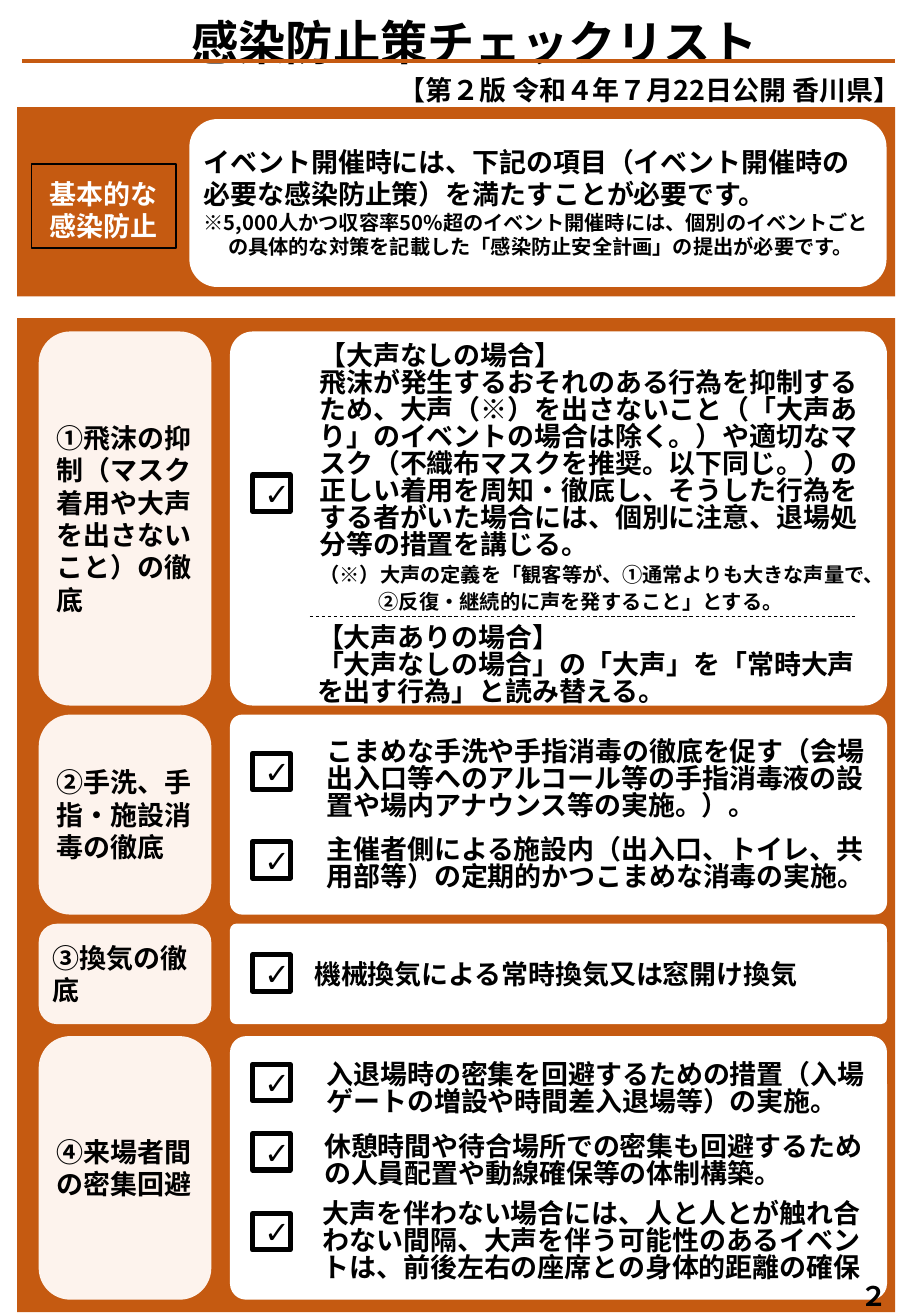
from dataclasses import dataclass

from lxml.etree import SubElement
from pptx import Presentation
from pptx.dml.color import RGBColor
from pptx.enum.dml import MSO_LINE
from pptx.enum.shapes import MSO_CONNECTOR, MSO_SHAPE
from pptx.enum.text import MSO_ANCHOR, MSO_AUTO_SIZE, PP_ALIGN
from pptx.oxml.ns import qn
from pptx.util import Cm, Pt

ORANGE = RGBColor(0xC5, 0x5A, 0x11)
CREAM = RGBColor(0xFD, 0xF3, 0xED)
WHITE = RGBColor(0xFF, 0xFF, 0xFF)
BLACK = RGBColor(0x00, 0x00, 0x00)
JAPANESE_FONT = "Noto Sans CJK JP"
CHECK_FONT = "Calibri"


@dataclass
class Line:
    text: str
    size: int = 16
    hanging: float = 0


@dataclass
class Item:
    left: float
    top: float
    height: float
    lines: list
    check_top: float = None


SECTIONS = [
    (6.93, 7.82, "①飛沫の抑制（マスク着用や大声を出さないこと）の徹底", [
        Item(5.62, 0.08, 5.94, [
            Line("【大声なしの場合】"),
            Line("飛沫が発生するおそれのある行為を抑制するため、大声（※）を出さないこと（「大声あり」のイベントの場合は除く。）"
                 "や適切なマスク（不織布マスクを推奨。以下同じ。）の正しい着用を周知・徹底し、そうした行為をする者がいた場合には、"
                 "個別に注意、退場処分等の措置を講じる。"),
            Line("（※）大声の定義を「観客等が、①通常よりも大きな声量で、②反復・継続的に声を発すること」とする。", 12, 1.24),
        ], 3.0),
        Item(5.57, 6.02, 1.96, [
            Line("【大声ありの場合】"),
            Line("「大声なしの場合」の「大声」を「常時大声を出す行為」と読み替える。"),
        ]),
    ]),
    (14.94, 4.18, "②手洗、手指・施設消毒の徹底", [
        Item(5.77, 0.38, 1.96, [Line(
            "こまめな手洗や手指消毒の徹底を促す（会場出入口等へのアルコール等の手指消毒液の設置や場内アナウンス等の実施。）。")], 0.81),
        Item(5.77, 2.41, 1.42, [Line(
            "主催者側による施設内（出入口、トイレ、共用部等）の定期的かつこまめな消毒の実施。")], 2.66),
    ]),
    (19.31, 2.1, "③換気の徹底", [
        Item(5.51, 0.65, 0.86, [Line("機械換気による常時換気又は窓開け換気")], 0.65),
    ]),
    (21.66, 5.51, "④来場者間の密集回避", [
        Item(5.77, 0.39, 1.42, [Line(
            "入退場時の密集を回避するための措置（入場ゲートの増設や時間差入退場等）の実施。")], 0.59),
        Item(5.72, 1.89, 1.42, [Line(
            "休憩時間や待合場所での密集も回避するための人員配置や動線確保等の体制構築。")], 2.04),
        Item(5.69, 3.28, 2.01, [Line(
            "大声を伴わない場合には、人と人とが触れ合わない間隔、大声を伴う可能性のあるイベントは、"
            "前後左右の座席との身体的距離の確保")], 3.71),
    ]),
]


def write(shape, lines, color=BLACK, align=PP_ALIGN.LEFT, anchor=MSO_ANCHOR.TOP,
          spacing=None, font=JAPANESE_FONT, bold=True):
    frame = shape.text_frame
    frame.word_wrap = True
    frame.auto_size = MSO_AUTO_SIZE.NONE
    frame.vertical_anchor = anchor
    frame.text = "\n".join(line.text for line in lines)
    for paragraph, line in zip(frame.paragraphs, lines):
        paragraph.alignment = align
        if spacing:
            paragraph.line_spacing = spacing
        run = paragraph.runs[0]
        run.font.name = font
        run.font.size = Pt(line.size)
        run.font.bold = bold
        run.font.color.rgb = color
        SubElement(run.font._element, qn("a:ea")).set("typeface", font)
        if line.hanging:
            properties = paragraph._p.get_or_add_pPr()
            properties.set("marL", str(Cm(line.hanging)))
            properties.set("indent", str(-Cm(line.hanging)))


def add_text(slide, left, top, width, height, lines, **style):
    box = slide.shapes.add_textbox(Cm(left), Cm(top), Cm(width), Cm(height))
    write(box, lines, **style)


def add_box(slide, kind, left, top, width, height, fill=None, outline=0, corner=None):
    shape = slide.shapes.add_shape(kind, Cm(left), Cm(top), Cm(width), Cm(height))
    shape.shadow.inherit = False
    if fill is None:
        shape.fill.background()
    else:
        shape.fill.solid()
        shape.fill.fore_color.rgb = fill
    if outline:
        shape.line.color.rgb = BLACK
        shape.line.width = Pt(outline)
    else:
        shape.line.fill.background()
    if corner is not None:
        shape.adjustments[0] = corner
    return shape


def add_rule(slide, left, right, top, color, width, dash=None):
    rule = slide.shapes.add_connector(
        MSO_CONNECTOR.STRAIGHT, Cm(left), Cm(top), Cm(right), Cm(top))
    rule.line.color.rgb = color
    rule.line.width = Pt(width)
    if dash:
        rule.line.dash_style = dash
    SubElement(rule._element.spPr, qn("a:effectLst"))


def add_heading(slide, left, top, width):
    title = slide.shapes.title
    title.left, title.top, title.width, title.height = Cm(left - 1.04), Cm(top), Cm(width + 2.75), Cm(1.45)
    write(title, [Line("感染防止策チェックリスト", 28)], align=PP_ALIGN.CENTER)
    add_rule(slide, left, left + width, top + 1.12, ORANGE, 2.25)
    add_text(slide, left + 7.19, top + 1.27, 11.86, 0.94,
             [Line("【第２版 令和４年７月22日公開 香川県】")], align=PP_ALIGN.CENTER)


def add_notice(slide, left, top, width, height):
    add_box(slide, MSO_SHAPE.RECTANGLE, left, top, width, height, ORANGE)
    add_box(slide, MSO_SHAPE.ROUNDED_RECTANGLE, left + 3.6, top + 0.25, width - 3.78, height - 0.45, WHITE)
    label = add_box(slide, MSO_SHAPE.RECTANGLE, left + 0.3, top + 1.19, 3.02, 1.75, outline=1)
    label.text_frame.margin_top = Cm(0.28)
    write(label, [Line("基本的な"), Line("感染防止")], WHITE, PP_ALIGN.CENTER, MSO_ANCHOR.MIDDLE)
    add_text(slide, left + 3.65, top + 0.68, 14.5, 2.72, [
        Line("イベント開催時には、下記の項目（イベント開催時の必要な感染防止策）を満たすことが必要です。"),
        Line("※5,000人かつ収容率50%超のイベント開催時には、個別のイベントごとの具体的な対策を記載した"
             "「感染防止安全計画」の提出が必要です。", 12, 0.51),
    ])


def add_section(slide, left, top, height, heading, items):
    add_box(slide, MSO_SHAPE.ROUNDED_RECTANGLE, left + 4.0, top, 13.74, height, WHITE, corner=0.061)
    label = add_box(slide, MSO_SHAPE.ROUNDED_RECTANGLE, left, top, 3.61, height, CREAM, corner=0.183)
    frame = label.text_frame
    frame.margin_left = frame.margin_right = Cm(0.18)
    frame.margin_top = frame.margin_bottom = Cm(0.1)
    write(label, [Line(heading)], anchor=MSO_ANCHOR.MIDDLE)
    for item in items:
        add_text(slide, left + item.left, top + item.top, 11.9, item.height, item.lines,
                 anchor=MSO_ANCHOR.BOTTOM, spacing=Pt(16))
        if item.check_top is None:
            add_rule(slide, left + 5.67, left + 17.07, top + item.top - 0.07, BLACK, 0.5, MSO_LINE.DASH)
        else:
            check = add_box(slide, MSO_SHAPE.RECTANGLE, left + 4.47, top + item.check_top, 0.79, 0.76, outline=3)
            write(check, [Line("✓", 18)], align=PP_ALIGN.CENTER, anchor=MSO_ANCHOR.MIDDLE,
                  font=CHECK_FONT, bold=False)


def add_checklist(slide, left, top, width, height):
    add_box(slide, MSO_SHAPE.RECTANGLE, left, top, width, height, ORANGE)
    for section_top, section_height, heading, items in SECTIONS:
        add_section(slide, left + 0.45, section_top, section_height, heading, items)
    add_text(slide, left + 17.17, top + height - 0.81, 1.5, 0.94, [Line("２")],
             align=PP_ALIGN.CENTER, anchor=MSO_ANCHOR.MIDDLE)


def main():
    presentation = Presentation()
    presentation.slide_width = Cm(19.05)
    presentation.slide_height = Cm(27.51)
    slide = presentation.slides.add_slide(presentation.slide_layouts[5])
    add_heading(slide, 0.46, 0.15, 18.26)
    add_notice(slide, 0.36, 2.24, 18.36, 3.96)
    add_checklist(slide, 0.36, 6.65, 18.36, 20.78)
    presentation.save("out.pptx")


if __name__ == "__main__":
    main()
